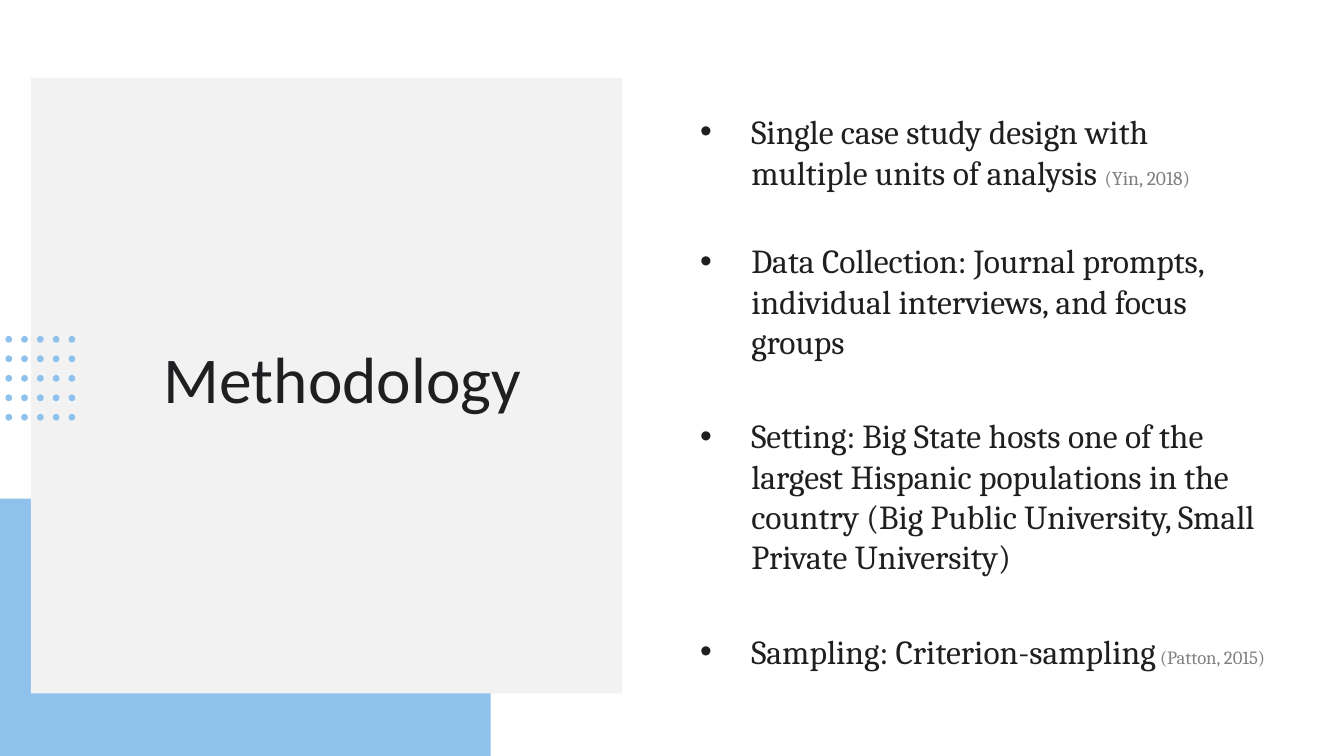
from dataclasses import dataclass

from lxml.etree import SubElement
from pptx import Presentation
from pptx.dml.color import RGBColor
from pptx.enum.shapes import MSO_SHAPE
from pptx.enum.text import MSO_ANCHOR, MSO_AUTO_SIZE, PP_ALIGN
from pptx.oxml.ns import qn
from pptx.util import Inches, Pt


@dataclass(frozen=True)
class Theme:
    accent: str = "8EC1EB"
    panel: str = "F2F2F2"
    text: str = "1E1F21"
    citation: str = "808080"
    title_font: str = "Calibri"
    body_font: str = "Cambria"
    title_size: float = 35
    body_size: float = 18
    first_citation_size: float = 10.5
    last_citation_size: float = 10


class SlideBuilder:
    def __init__(self, slide, theme):
        self.slide = slide
        self.theme = theme

    def add_filled_shape(self, shapes, kind, box, color):
        shape = shapes.add_shape(kind, *map(Inches, box))
        shape.shadow.inherit = False
        shape.fill.solid()
        shape.fill.fore_color.rgb = RGBColor.from_string(color)
        shape.line.fill.background()

    def add_panel(self, box, color):
        self.add_filled_shape(self.slide.shapes, MSO_SHAPE.RECTANGLE, box, color)

    def add_dot_grid(self, left, top, width, height, count, diameter):
        """Spread a square grid of dots evenly over the given area."""
        group = self.slide.shapes.add_group_shape()
        step_x = (width - diameter) / (count - 1)
        step_y = (height - diameter) / (count - 1)
        for column in range(count):
            for row in range(count):
                box = (left + column * step_x, top + row * step_y, diameter, diameter)
                self.add_filled_shape(group.shapes, MSO_SHAPE.OVAL, box, self.theme.accent)

    def place_placeholder(self, placeholder, box):
        """Move a placeholder to its box and in front of the shapes drawn so far."""
        placeholder.left, placeholder.top, placeholder.width, placeholder.height = map(Inches, box)
        self.slide.shapes._spTree.append(placeholder._element)
        text_frame = placeholder.text_frame
        text_frame.word_wrap = True
        text_frame.auto_size = MSO_AUTO_SIZE.NONE
        text_frame.vertical_anchor = MSO_ANCHOR.MIDDLE
        return text_frame

    def format_run(self, run, font_name, size, color):
        run.font.name = font_name
        run.font.size = Pt(size)
        run.font.color.rgb = RGBColor.from_string(color)

    def add_title(self, text, box):
        text_frame = self.place_placeholder(self.slide.shapes.title, box)
        text_frame.text = text
        paragraph = text_frame.paragraphs[0]
        paragraph.alignment = PP_ALIGN.CENTER
        self.format_run(paragraph.runs[0], self.theme.title_font,
                        self.theme.title_size, self.theme.text)

    def add_bullet(self, paragraph, indent):
        properties = paragraph._p.get_or_add_pPr()
        properties.set("marL", str(Inches(indent)))
        properties.set("indent", str(-Inches(indent)))
        SubElement(properties, qn("a:buFont"), typeface="Arial")
        SubElement(properties, qn("a:buChar"), char="•")

    def add_list(self, items, box):
        text_frame = self.place_placeholder(self.slide.placeholders[1], box)
        text_frame.margin_right = Inches(0.05)
        for index, (space_before, runs) in enumerate(items):
            paragraph = text_frame.paragraphs[0] if index == 0 else text_frame.add_paragraph()
            self.add_bullet(paragraph, 0.38)
            paragraph.space_before = Pt(space_before)
            for text, size, color in runs:
                run = paragraph.add_run()
                run.text = text
                self.format_run(run, self.theme.body_font, size, color)


def main():
    theme = Theme()
    presentation = Presentation()
    # Widescreen page, 16:9
    presentation.slide_width = Inches(10)
    presentation.slide_height = Inches(10) * 9 // 16
    slide = presentation.slides.add_slide(presentation.slide_layouts[1])
    builder = SlideBuilder(slide, theme)

    # Background panels
    builder.add_panel((0, 3.71, 3.65, 1.92), theme.accent)
    builder.add_panel((0.23, 0.58, 4.4, 4.58), theme.panel)

    # Title and decorative dots
    builder.add_title("Methodology", (0.83, 1.1, 3.44, 3.42))
    builder.add_dot_grid(0.04, 2.5, 0.52, 0.63, 5, 0.05)

    # Bullet list: space before in points, then the runs
    size, color = theme.body_size, theme.text
    items = [
        (0, [("Single case study design with multiple units of analysis ", size, color),
             ("(Yin, 2018)", theme.first_citation_size, theme.citation)]),
        (26, [("Data Collection: Journal prompts, individual interviews, "
               "and focus groups", size, color)]),
        (29, [("Setting: Big State hosts one of the largest Hispanic populations in "
               "the country (Big Public University, Small Private University)", size, color)]),
        (29, [("Sampling: Criterion-sampling", size, color),
              (" ", theme.last_citation_size, color),
              ("(Patton, 2015)", theme.last_citation_size, theme.citation)]),
    ]
    builder.add_list(items, (5.11, 0.62, 4.4, 4.58))

    presentation.save("out.pptx")


if __name__ == "__main__":
    main()
